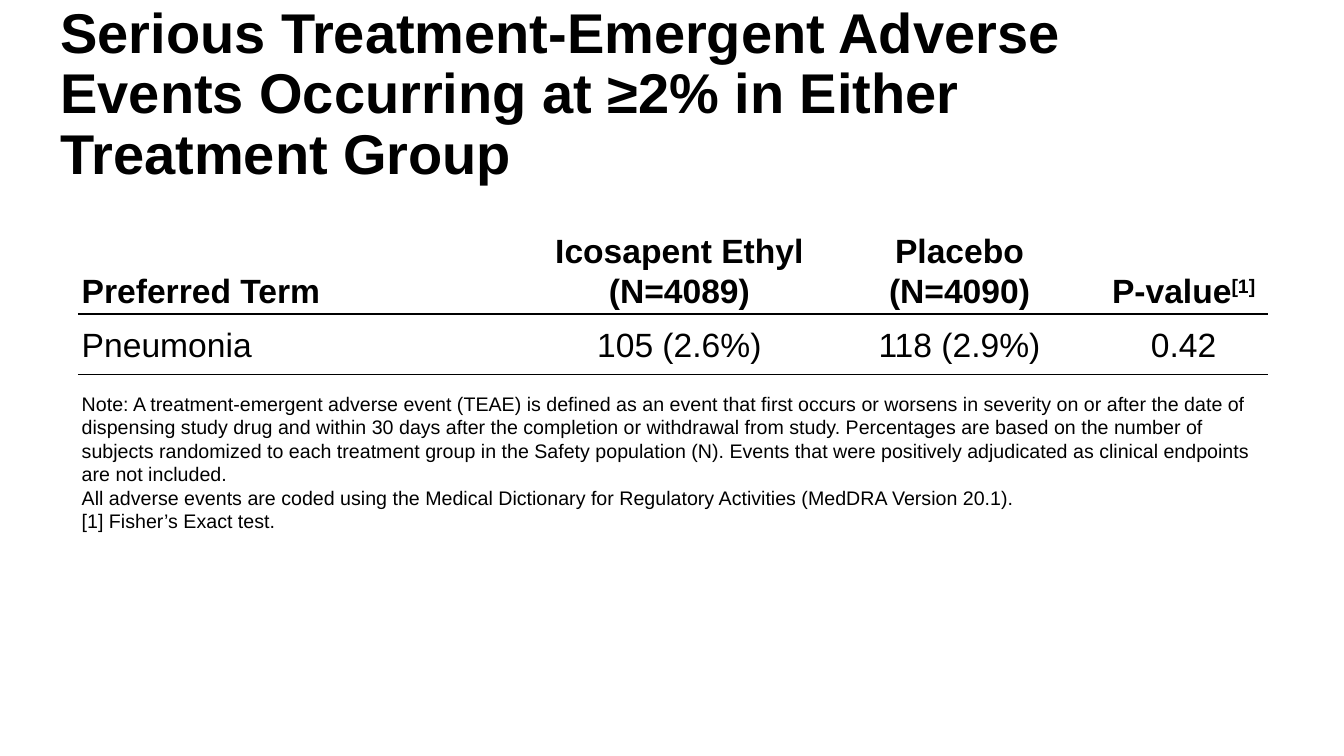
from lxml.etree import SubElement
from pptx import Presentation
from pptx.dml.color import RGBColor
from pptx.enum.text import MSO_ANCHOR, MSO_AUTO_SIZE, PP_ALIGN
from pptx.oxml.ns import qn
from pptx.util import Cm, Pt

HEADERS = ["Preferred Term", "Icosapent Ethyl\v(N=4089)", "Placebo\v(N=4090)", "P-value"]
VALUES = ["Pneumonia", "105 (2.6%)", "118 (2.9%)", "0.42"]
NOTE = (
    "Note: A treatment-emergent adverse event (TEAE) is defined as an event that first "
    "occurs or worsens in severity on or after the date of dispensing study drug and "
    "within 30 days after the completion or withdrawal from study. Percentages are based "
    "on the number of subjects randomized to each treatment group in the Safety "
    "population (N). Events that were positively adjudicated as clinical endpoints are "
    "not included.\v"
    "All adverse events are coded using the Medical Dictionary for Regulatory Activities "
    "(MedDRA Version 20.1).\v"
    "[1] Fisher’s Exact test."
)
COL_WIDTHS = [11.63, 7.06, 7.06, 4.24]
ROW_HEIGHTS = [2.31, 1.52, 5.13]
RULES = [1.5, 1]  # line width below each row
PLAIN_TABLE = "{2D5ABB26-0587-4C30-8999-92F81FD0307C}"


def rgb(value):
    return RGBColor.from_string(value)


class SlideBuilder:
    font, ink, paper = "Arial", "000000", "FFFFFF"

    def __init__(self, slide):
        self.slide = slide

    def paragraph(self, p, text, size, bold=False, align=PP_ALIGN.LEFT, spacing=1.07):
        p.text = text
        for name, value in dict(alignment=align, line_spacing=spacing,
                                space_before=Pt(0), space_after=Pt(0)).items():
            setattr(p, name, value)
        for r in p.runs:
            self.style(r, size, bold)

    def style(self, r, size, bold):
        for name, value in dict(name=self.font, size=Pt(size), bold=bold).items():
            setattr(r.font, name, value)
        r.font.color.rgb = rgb(self.ink)

    def title(self, text, left, top, width, height):
        sp = self.slide.shapes.title
        for name, value in dict(left=left, top=top, width=width, height=height).items():
            setattr(sp, name, Cm(value))
        tf = sp.text_frame
        tf.word_wrap = True
        tf.auto_size = MSO_AUTO_SIZE.NONE
        tf.vertical_anchor = MSO_ANCHOR.MIDDLE
        self.paragraph(tf.paragraphs[0], text, 40, bold=True, spacing=0.9)

    def table(self, left, top, widths, heights):
        frame = self.slide.shapes.add_table(
            len(heights), len(widths), Cm(left), Cm(top), Cm(sum(widths)), Cm(sum(heights)))
        table = frame.table
        table.first_row = table.horz_banding = False
        table._tbl.tblPr.find(qn("a:tableStyleId")).text = PLAIN_TABLE
        for col, width in zip(table.columns, widths):
            col.width = Cm(width)
        for row, height in zip(table.rows, heights):
            row.height = Cm(height)
        return table

    def cell(self, cell, text, size, anchor, top=0.1, bottom=0.1, **text_style):
        for name, value in dict(margin_left=Cm(0.1), margin_right=Cm(0.1),
                                margin_top=Cm(top), margin_bottom=Cm(bottom),
                                vertical_anchor=anchor).items():
            setattr(cell, name, value)
        cell.fill.solid()
        cell.fill.fore_color.rgb = rgb(self.paper)
        p = cell.text_frame.paragraphs[0]
        self.paragraph(p, text, size, **text_style)
        return p

    def superscript(self, p, text, size, bold):
        r = p.add_run()
        r.text = text
        self.style(r, size, bold)
        r.font._element.set("baseline", "30000")

    def border(self, cell, side, width):
        tcPr = cell._tc.get_or_add_tcPr()
        ln = SubElement(tcPr, qn(f"a:ln{side}"), w=str(Pt(width)))
        fill = SubElement(ln, qn("a:solidFill"))
        SubElement(fill, qn("a:srgbClr"), val=self.ink)
        # Borders come before the fill, top before bottom
        tcPr.insert(len(tcPr.findall(qn("a:lnT"))) - (side == "T"), ln)


def main():
    prs = Presentation()
    prs.slide_width, prs.slide_height = Cm(33.87), Cm(19.05)
    s = SlideBuilder(prs.slides.add_slide(prs.slide_layouts[5]))

    # Title
    s.title("Serious Treatment-Emergent Adverse Events Occurring at ≥2% in Either "
            "Treatment Group", 1.27, 0.23, 29.21, 4.37)

    # Header and value rows
    table = s.table(1.96, 5.61, COL_WIDTHS, ROW_HEIGHTS)
    for c, (header, value) in enumerate(zip(HEADERS, VALUES)):
        align = PP_ALIGN.CENTER if c else PP_ALIGN.LEFT
        p = s.cell(table.cell(0, c), header, 24, MSO_ANCHOR.BOTTOM, bold=True, align=align)
        s.cell(table.cell(1, c), value, 24, MSO_ANCHOR.MIDDLE, align=align)
    s.superscript(p, "[1]", 24, bold=True)

    # Note across the last row
    note = table.cell(2, 0)
    note.merge(table.cell(2, len(COL_WIDTHS) - 1))
    s.cell(note, NOTE, 14, MSO_ANCHOR.TOP, top=0.43, bottom=0)

    # Rules between rows
    for row, width in enumerate(RULES):
        for c in range(len(COL_WIDTHS)):
            s.border(table.cell(row, c), "B", width)
            s.border(table.cell(row + 1, c), "T", width)

    prs.save("out.pptx")


if __name__ == "__main__":
    main()
